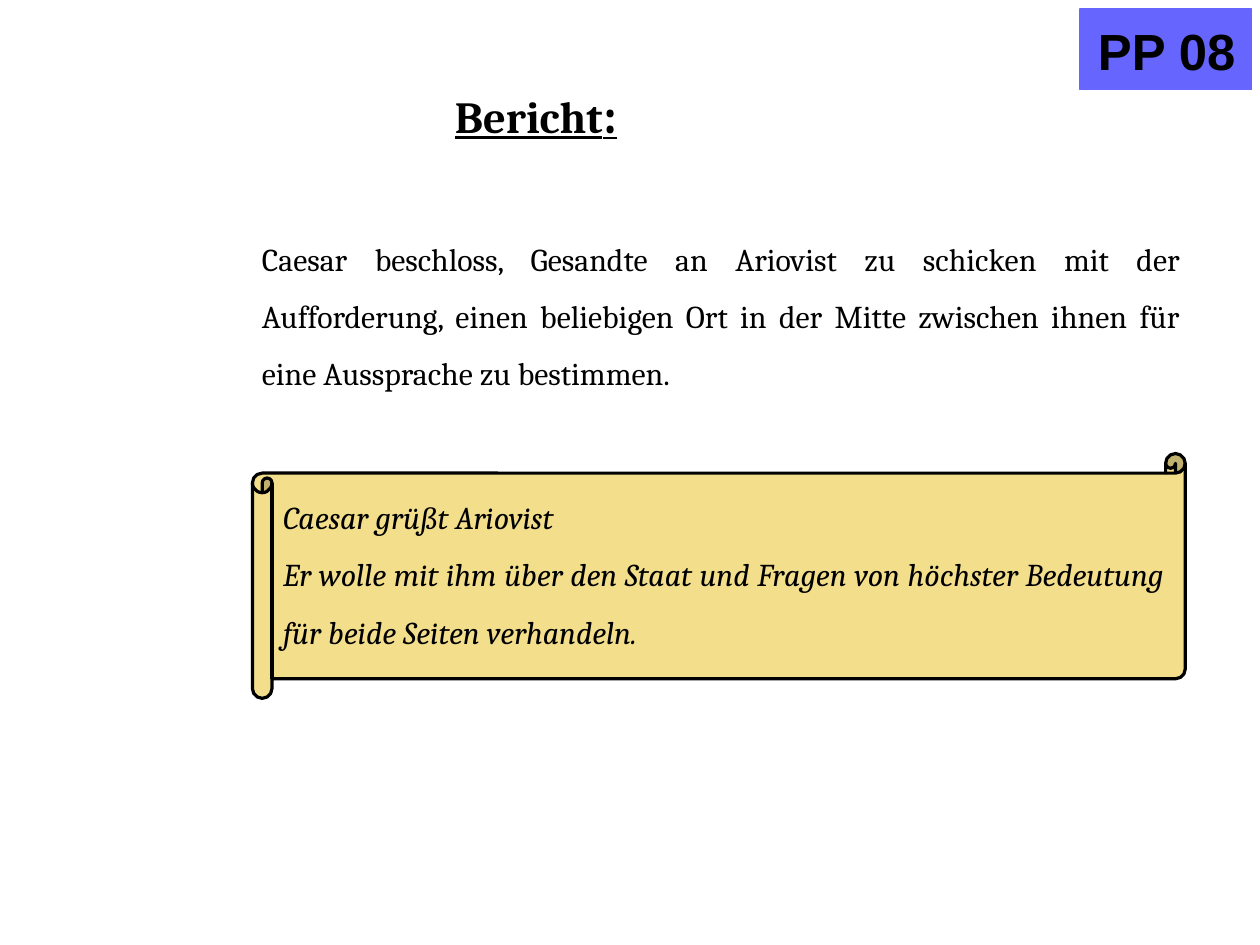
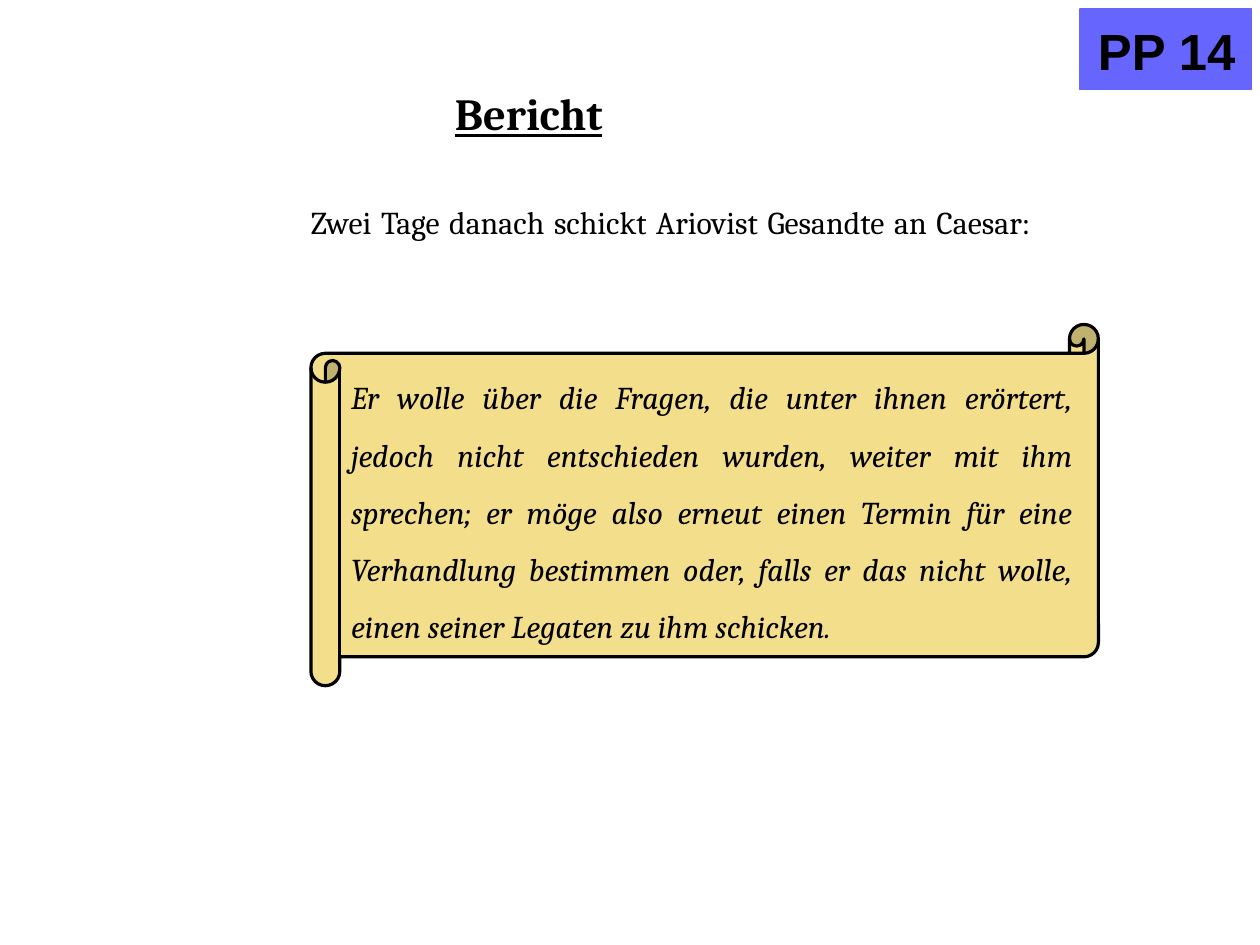
"""Build two report slides with a numbered badge, an introduction and a scroll."""
from pptx import Presentation
from pptx.dml.color import RGBColor
from pptx.enum import shapes, text
from pptx.util import Cm, Pt

BLACK = RGBColor(0x00, 0x00, 0x00)
BADGE = RGBColor(0x66, 0x66, 0xFF)
PARCHMENT = RGBColor(0xF2, 0xDE, 0x8B)
SERIF, SANS = "Cambria", "Arial"
JUSTIFY = text.PP_ALIGN.JUSTIFY
LEFT = text.PP_ALIGN.LEFT
TOP, MIDDLE = text.MSO_ANCHOR.TOP, text.MSO_ANCHOR.MIDDLE


def write(tf, paragraphs, size=20, font=SERIF, bold=False, italic=False, underline=False,
          align=JUSTIFY, spacing=1.5, anchor=TOP, margins=(0, 0, 0, 0)):
    """Fill a text frame; each paragraph is a list of (text, size or None) runs or a string."""
    tf.word_wrap = True
    tf.auto_size = text.MSO_AUTO_SIZE.NONE
    tf.vertical_anchor = anchor
    tf.margin_left, tf.margin_top, tf.margin_right, tf.margin_bottom = map(Cm, margins)
    for i, runs in enumerate(paragraphs):
        p = tf.add_paragraph() if i else tf.paragraphs[0]
        p.alignment, p.line_spacing = align, spacing
        p.space_before = Pt(0)
        if isinstance(runs, str):
            p.text = runs
        else:
            for words, run_size in runs:
                r = p.add_run()
                r.text = words
                r.font.size = Pt(run_size)
        for r in p.runs:
            f = r.font
            f.size = f.size or Pt(size)
            f.name, f.bold, f.italic, f.underline = font, bold, italic, underline
            f.color.rgb = BLACK


def add_filled(s, kind, box, fill, line, width):
    """Add a preset shape with a plain fill and outline."""
    sp = s.shapes.add_shape(kind, *map(Cm, box))
    sp.shadow.inherit = False
    sp.fill.solid()
    sp.fill.fore_color.rgb = fill
    sp.line.color.rgb = line
    sp.line.width = Pt(width)
    return sp


REPORTS = [
    dict(
        badge="PP 08",
        title=[("Bericht", 28), (":", 32)],
        intro="Caesar beschloss, Gesandte an Ariovist zu schicken mit der Aufforderung, "
              "einen beliebigen Ort in der Mitte zwischen ihnen für eine Aussprache zu bestimmen.",
        intro_box=(5.82, 4.9, 20.41, 4.98),
        message=["Caesar grüßt Ariovist",
                 "Er wolle mit ihm über den Staat und Fragen von höchster Bedeutung "
                 "für beide Seiten verhandeln."],
        scroll_box=(5.61, 10.08, 20.73, 5.44),
    ),
    dict(
        badge="PP 14",
        title=[("Bericht", 28)],
        intro="Zwei Tage danach schickt Ariovist Gesandte an Caesar:\v",
        intro_box=(6.91, 4.09, 16, 3.5),
        message=["Er wolle über die Fragen, die unter ihnen erörtert, jedoch nicht entschieden "
                 "wurden, weiter mit ihm sprechen; er möge also erneut einen Termin für eine "
                 "Verhandlung bestimmen oder, falls er das nicht wolle, einen seiner Legaten "
                 "zu ihm schicken."],
        scroll_box=(6.91, 7.21, 17.5, 8.03),
    ),
]

prs = Presentation()
prs.slide_width, prs.slide_height = Cm(28), Cm(21)

for report in REPORTS:
    s = prs.slides.add_slide(prs.slide_layouts[5])

    title = s.shapes.title
    title.left, title.top, title.width, title.height = map(Cm, (10.11, 0.84, 17.09, 3.5))
    write(title.text_frame, [report["title"]], bold=True, underline=True,
          align=LEFT, spacing=0.9, anchor=MIDDLE)

    badge = add_filled(s, shapes.MSO_SHAPE.RECTANGLE, (24, 0.2, 3.81, 1.8), BADGE, BADGE, 0)
    write(badge.text_frame, [report["badge"]], size=32, font=SANS, bold=True,
          align=LEFT, spacing=1.0, anchor=MIDDLE, margins=(0.4, 0.05, 0, 0))

    intro = s.shapes.add_textbox(*map(Cm, report["intro_box"]))
    write(intro.text_frame, [report["intro"]])

    scroll = add_filled(s, shapes.MSO_SHAPE.HORIZONTAL_SCROLL, report["scroll_box"],
                        PARCHMENT, BLACK, 2)
    scroll.adjustments[0] = 0.08
    write(scroll.text_frame, report["message"], italic=True,
          margins=(0.25, 0.13, 0.25, 0.13))

prs.save("out.pptx")
